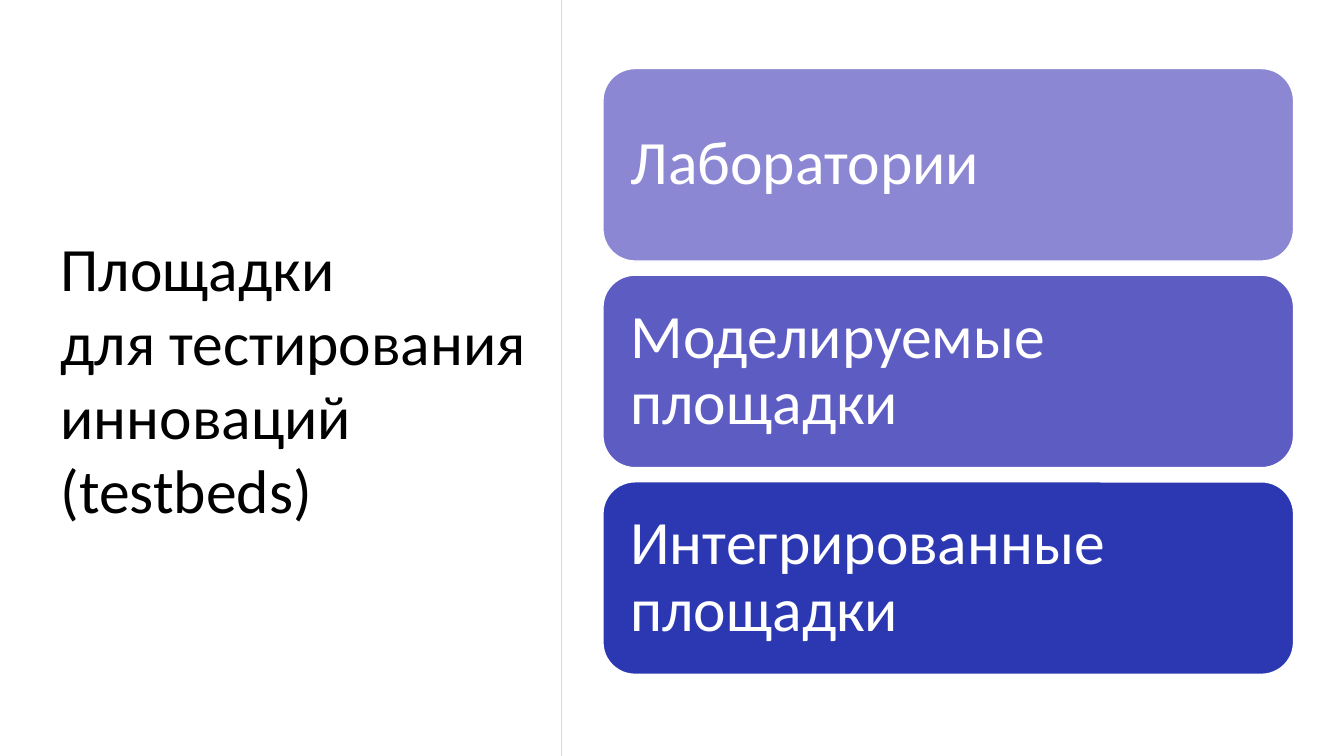
from dataclasses import dataclass

from lxml import etree
from pptx import Presentation
from pptx.dml.color import RGBColor
from pptx.enum import shapes, text
from pptx.oxml import ns
from pptx.util import Inches, Pt


@dataclass(frozen=True)
class Theme:
    font: str = "Calibri"
    size: int = 44
    ink: str = "000000"
    paper: str = "FFFFFF"
    rule: str = "D9D9D9"
    cards: tuple = ("8C87D3", "5C5CC3", "2C38B2")


THEME = Theme()
TITLE = "Площадки\vдля тестирования инноваций (testbeds)"
TESTBEDS = ("Лаборатории", "Моделируемые площадки", "Интегрированные площадки")


def apply(target, formats):
    for name, value in formats.items():
        setattr(target, name, value)


def paint(fill, color):
    fill.solid()
    fill.fore_color.rgb = RGBColor.from_string(color)


def write(shape, words, color, inset, line_spacing):
    """Fill a shape with left-aligned, vertically centred text."""
    frame = shape.text_frame
    frame.text = words
    apply(frame, {
        "word_wrap": True,
        "auto_size": text.MSO_AUTO_SIZE.NONE,
        "vertical_anchor": text.MSO_ANCHOR.MIDDLE,
        "margin_left": Inches(inset),
        "margin_right": Inches(inset),
    })
    para = frame.paragraphs[0]
    apply(para, {"alignment": text.PP_ALIGN.LEFT, "line_spacing": line_spacing})
    for span in para.runs:
        apply(span.font, {"name": THEME.font, "size": Pt(THEME.size)})
        span.font.color.rgb = RGBColor.from_string(color)


def add_title_panel(page, left, top, width, height):
    # Title over the full height of the panel
    title = page.shapes.title
    apply(title, {
        "left": Inches(left), "top": Inches(top),
        "width": Inches(width), "height": Inches(height),
    })
    paint(title.fill, THEME.paper)
    write(title, TITLE, THEME.ink, inset=0.1, line_spacing=1.0)

    # Hairline along the right edge
    edge = Inches(left + width)
    rule = page.shapes.add_connector(
        shapes.MSO_CONNECTOR.STRAIGHT, edge, Inches(top), edge, Inches(top + height))
    rule.line.width = Pt(0.5)
    paint(rule.line.fill, THEME.rule)
    etree.SubElement(rule._element.spPr, ns.qn("a:effectLst"))


def add_testbed_cards(page, left, top, width, height, gap=0.14):
    # Equal cards stacked from light to dark
    card_height = (height - gap * (len(TESTBEDS) - 1)) / len(TESTBEDS)
    for index, (words, color) in enumerate(zip(TESTBEDS, THEME.cards)):
        card = page.shapes.add_shape(
            shapes.MSO_SHAPE.ROUNDED_RECTANGLE,
            Inches(left), Inches(top + index * (card_height + gap)),
            Inches(width), Inches(card_height))
        card.shadow.inherit = False
        paint(card.fill, color)
        paint(card.line.fill, THEME.paper)
        card.line.width = Pt(1)
        write(card, words, THEME.paper, inset=0.18, line_spacing=0.9)


def main():
    deck = Presentation()
    apply(deck, {"slide_width": Inches(13.33), "slide_height": Inches(7.5)})
    page = deck.slides.add_slide(deck.slide_layouts.get_by_name("Title Only"))
    add_title_panel(page, left=0.5, top=0, width=5.07, height=7.5)
    add_testbed_cards(page, left=5.98, top=0.68, width=6.85, height=6.01)
    deck.save("out.pptx")


if __name__ == "__main__":
    main()
